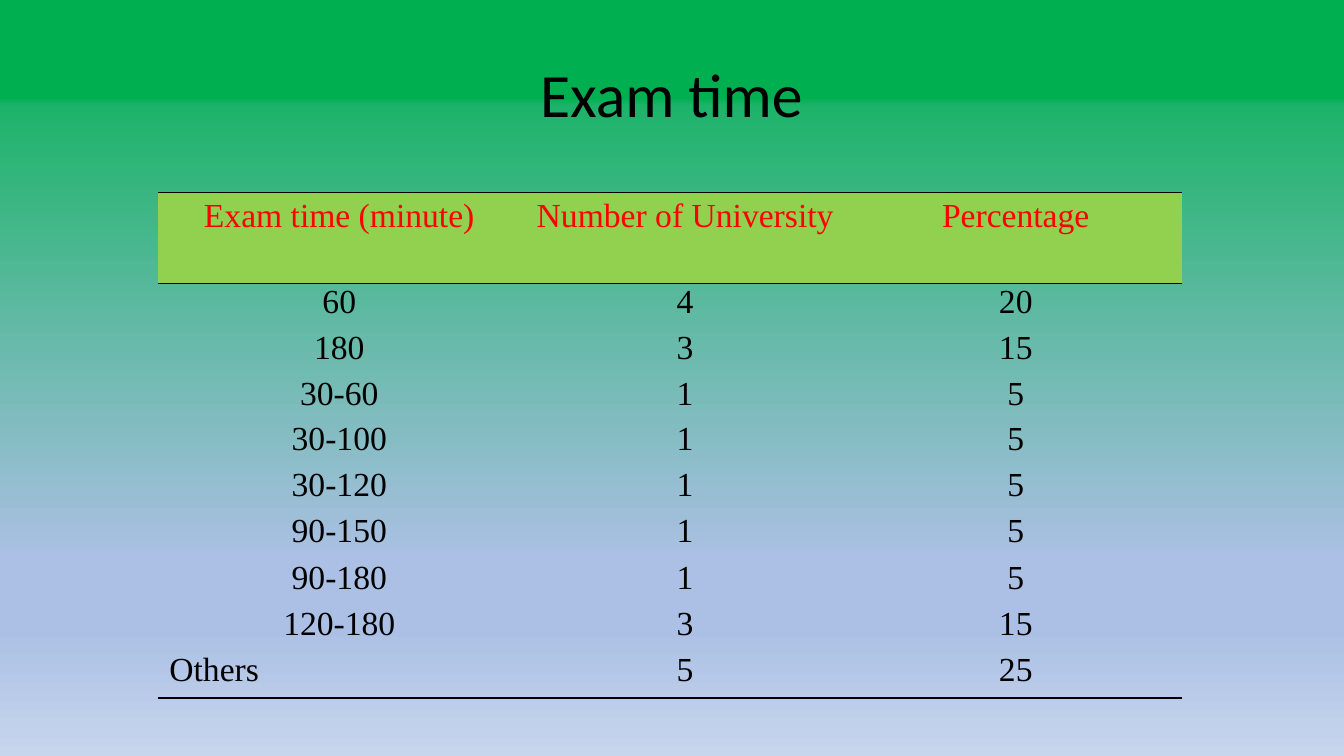
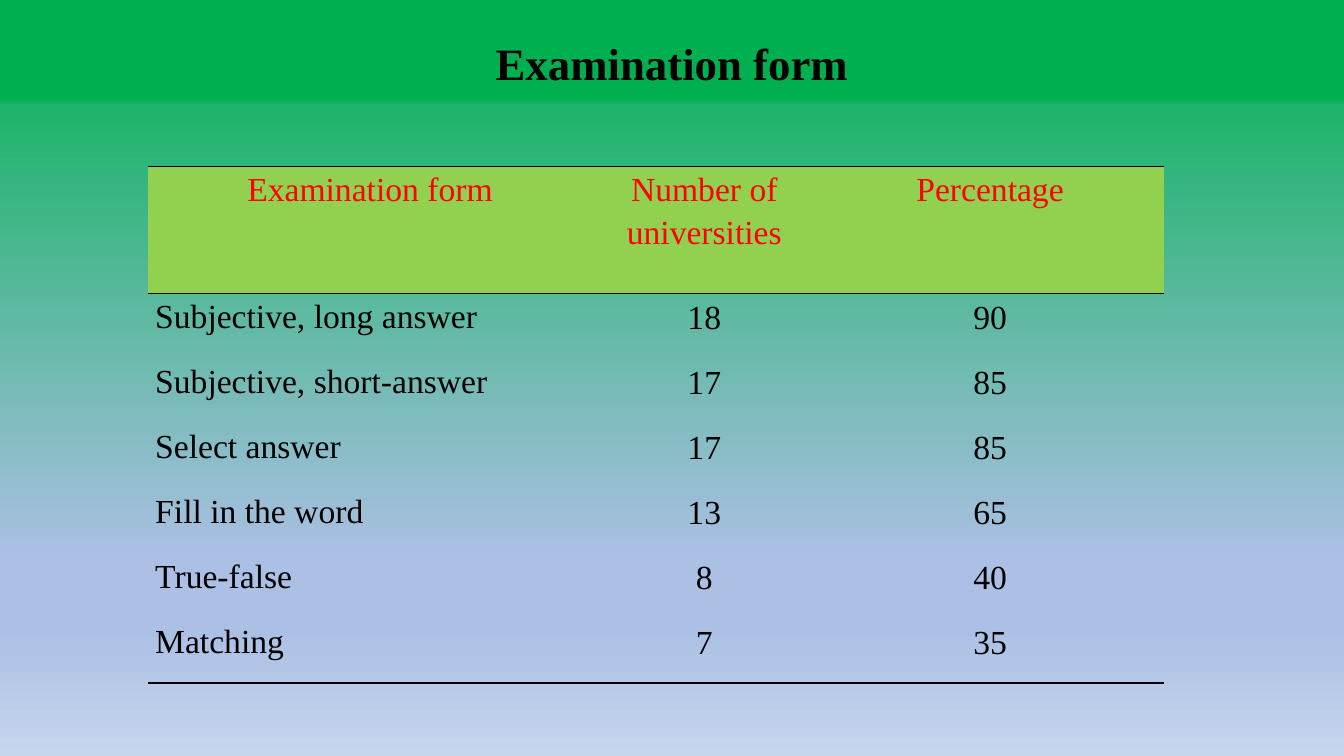
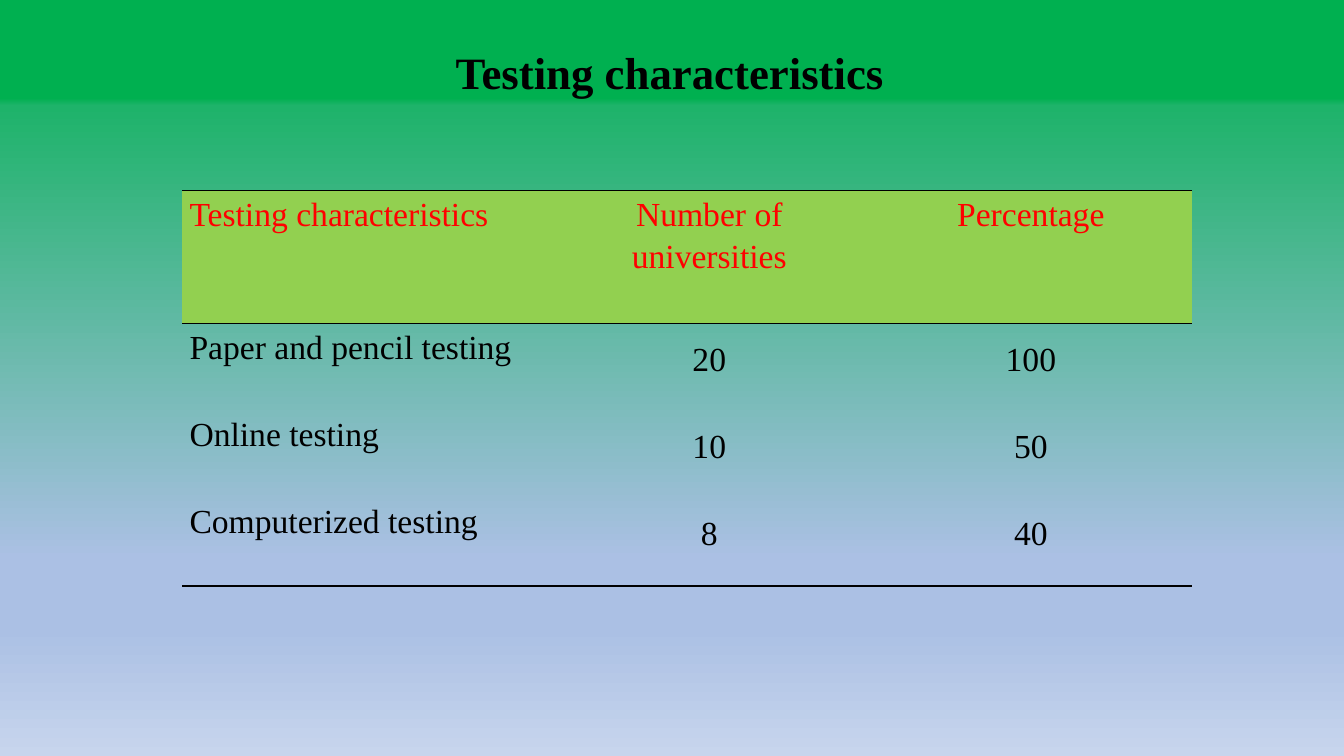
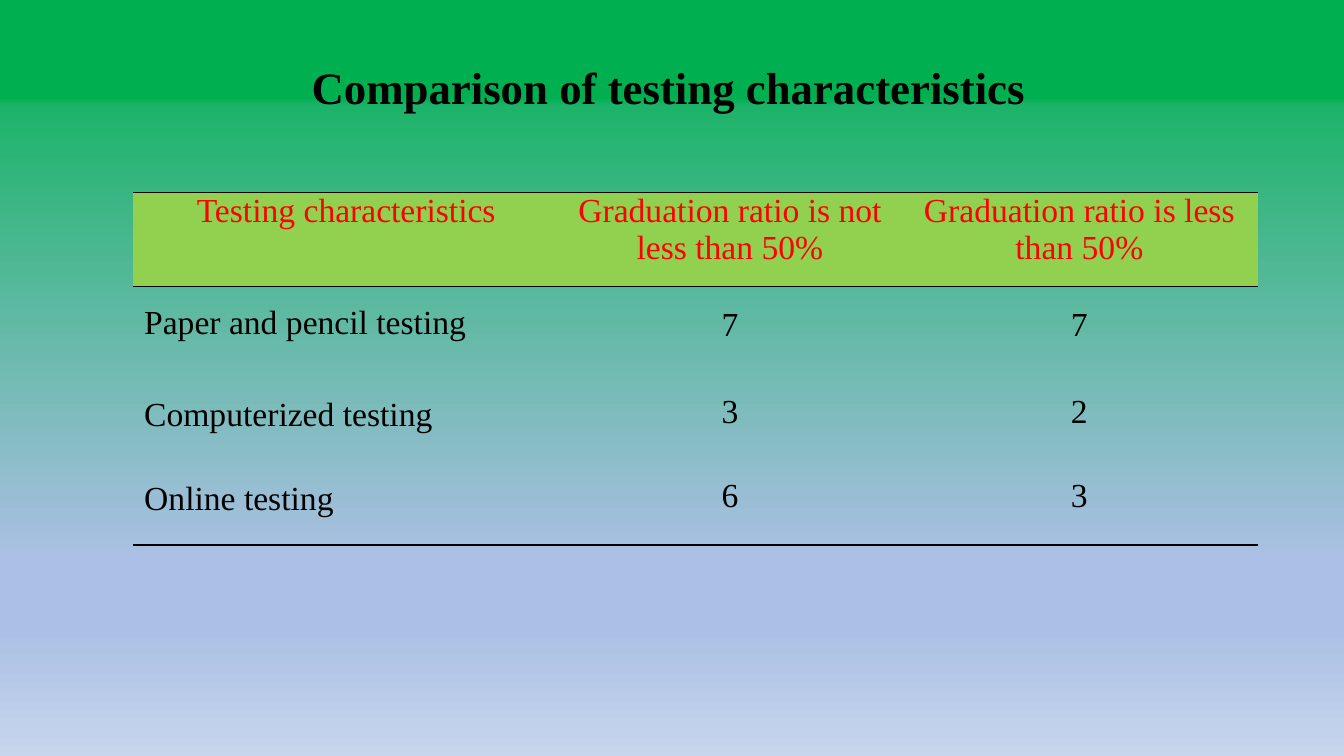
from lxml import etree
from pptx import Presentation
from pptx import util as u
from pptx.dml.color import RGBColor
from pptx.enum import text
from pptx.oxml.ns import qn

BLACK = RGBColor(0x00, 0x00, 0x00)
RED = RGBColor(0xFF, 0x00, 0x00)
LIME = RGBColor(0x92, 0xD0, 0x50)
STOPS = [(13, RGBColor(0x00, 0xB0, 0x50)), (14, RGBColor(0x1E, 0xB3, 0x6A)),
         (74, RGBColor(0xAB, 0xC0, 0xE4)), (83, RGBColor(0xAB, 0xC0, 0xE4)),
         (100, RGBColor(0xC7, 0xD5, 0xED))]
SERIF = "Times New Roman"
PLAIN = "{2D5ABB26-0587-4C30-8999-92F81FD0307C}"
LEFT, MID, JUST = text.PP_ALIGN.LEFT, text.PP_ALIGN.CENTER, text.PP_ALIGN.JUSTIFY
TOP, CORE = text.MSO_ANCHOR.TOP, text.MSO_ANCHOR.MIDDLE
TIGHT = u.Pt(16)

HEAD = dict(align=MID, space=1.15, dent=0, anchor=TOP)
NAME = dict(align=LEFT, space=1.15, dent=0, anchor=TOP)
COUNT = dict(align=MID, space=TIGHT, dent=0.04, anchor=CORE)
TIME = dict(align=MID, space=1.0, dent=0.04, anchor=TOP)

SLIDES = [
    dict(title="Exam time", box=(0.91, 0.4, 11.5, 1.14), align=MID,
         font=("Calibri", 44, False), space=0.9, at=(1.57, 1.91),
         cols=[3.59, 3.27, 3.29], rows=[0.9] + [0.46] * 2 + [0.44] + [0.46] * 6,
         edge=1.5, base=1.5, styles=(HEAD, TIME, TIME),
         odd={(9, 0): dict(TIME, align=JUST)},
         data=[("Exam time (minute)", "Number of University", "Percentage"),
               ("60", 4, 20), ("180", 3, 15), ("30-60", 1, 5),
               ("30-100", 1, 5), ("30-120", 1, 5), ("90-150", 1, 5),
               ("90-180", 1, 5), ("120-180", 3, 15), ("Others", 5, 25)]),
    dict(title="Examination form", box=(4.8, 0.3, 3.73, 0.64), align=MID,
         font=(SERIF, 32, True), space=1.0, at=(1.47, 1.65),
         cols=[4.4, 2.23, 3.44], rows=[1.26] + [3.87 / 6] * 6,
         edge=1, base=1.5, styles=(HEAD, NAME, COUNT), odd={},
         data=[("Examination form", "Number of universities", "Percentage"),
               ("Subjective, long answer", 18, 90),
               ("Subjective, short-answer", 17, 85), ("Select answer", 17, 85),
               ("Fill in the word", 13, 65), ("True-false", 8, 40),
               ("Matching", 7, 35)]),
    dict(title="Testing characteristics", box=(4.42, 0.39, 4.49, 0.64), align=LEFT,
         font=(SERIF, 32, True), space=1.0, at=(1.81, 1.89),
         cols=[3.63, 3.19, 3.19], rows=[1.32] + [2.6 / 3] * 3,
         edge=1, base=1.5, styles=(HEAD, NAME, COUNT), odd={(0, 0): NAME},
         data=[("Testing characteristics", "Number of universities", "Percentage"),
               ("Paper and pencil testing", 20, 100),
               ("Online testing", 10, 50), ("Computerized testing", 8, 40)]),
    dict(title="Comparison of testing characteristics", box=(2.99, 0.54, 7.35, 0.64),
         align=LEFT, font=(SERIF, 32, True), space=1.0, at=(1.32, 1.91),
         cols=[4.23, 3.38, 3.55], rows=[0.93, 0.91, 0.83, 0.83],
         edge=1.5, base=1.5, odd={(0, 0): dict(HEAD, space=1.0)},
         styles=(TIME, dict(NAME, space=1.5, dent=0.04), COUNT),
         data=[("Testing characteristics", "Graduation ratio is not less than 50%",
                "Graduation ratio is less than 50%"),
               ("Paper and pencil testing", 7, 7),
               ("Computerized testing", 3, 2), ("Online testing", 6, 3)]),
]


def paint_back(master):
    fill = master.background.fill
    fill.gradient()
    fill.gradient_angle = 270
    group = next(master.element.iter(qn("a:gsLst")))
    for old in list(group):
        group.remove(old)
    for pos, color in STOPS:
        stop = etree.SubElement(group, qn("a:gs"), pos=str(pos * 1000))
        etree.SubElement(stop, qn("a:srgbClr"), val=str(color))


def style_run(para, name, size, color, bold=False):
    font = para.runs[0].font
    font.name, font.size, font.bold = name, u.Pt(size), bold
    font.color.rgb = color


def put_title(slide, item):
    title = slide.shapes.title
    title.left, title.top, title.width, title.height = map(u.Inches, item["box"])
    frame = title.text_frame
    frame.text = item["title"]
    frame.auto_size = text.MSO_AUTO_SIZE.NONE
    frame.word_wrap = False
    frame.vertical_anchor = CORE
    para = frame.paragraphs[0]
    para.alignment, para.line_spacing = item["align"], item["space"]
    name, size, bold = item["font"]
    style_run(para, name, size, BLACK, bold)


def rule_cell(cell, above, below):
    props = cell._tc.get_or_add_tcPr()
    sides = [("a:lnL", 0), ("a:lnR", 0), ("a:lnT", above), ("a:lnB", below)]
    for spot, (tag, width) in enumerate(sides):
        line = etree.Element(qn(tag), w=str(u.Pt(width)))
        if width:
            fill = etree.SubElement(line, qn("a:solidFill"))
            etree.SubElement(fill, qn("a:srgbClr"), val=str(BLACK))
        else:
            etree.SubElement(line, qn("a:noFill"))
        props.insert(spot, line)


def fill_cell(cell, value, style, head):
    cell.margin_left = cell.margin_right = u.Inches(0.07)
    cell.margin_top = cell.margin_bottom = 0
    cell.vertical_anchor = style["anchor"]
    if head:
        cell.fill.solid()
        cell.fill.fore_color.rgb = LIME
    else:
        cell.fill.background()
    para = cell.text_frame.paragraphs[0]
    para.text = str(value)
    para.alignment, para.line_spacing = style["align"], style["space"]
    para.space_after = u.Pt(10)
    for side in ("marL", "marR"):
        para._p.get_or_add_pPr().set(side, str(u.Inches(style["dent"])))
    style_run(para, SERIF, 24, RED if head else BLACK)


def put_table(slide, item):
    rows, cols, data = item["rows"], item["cols"], item["data"]
    size = (sum(cols), sum(rows))
    table = slide.shapes.add_table(len(rows), len(cols),
                                   *map(u.Inches, item["at"] + size)).table
    table.first_row = table.horz_banding = False
    table._tbl.tblPr.find(qn("a:tableStyleId")).text = PLAIN
    for col, width in zip(table.columns, cols):
        col.width = u.Inches(width)
    for row, height in zip(table.rows, rows):
        row.height = u.Inches(height)
    head, first, rest = item["styles"]
    rules = [item["edge"], 1] + [0] * (len(data) - 2) + [item["base"]]
    for r, record in enumerate(data):
        for c, value in enumerate(record):
            style = head if r == 0 else first if c == 0 else rest
            cell = table.cell(r, c)
            fill_cell(cell, value, item["odd"].get((r, c), style), r == 0)
            rule_cell(cell, rules[r], rules[r + 1])


def main():
    deck = Presentation()
    deck.slide_width, deck.slide_height = u.Inches(13.33), u.Inches(7.5)
    paint_back(deck.slide_master)
    for item in SLIDES:
        slide = deck.slides.add_slide(deck.slide_layouts[5])
        put_title(slide, item)
        put_table(slide, item)
    deck.save("out.pptx")


if __name__ == "__main__":
    main()
